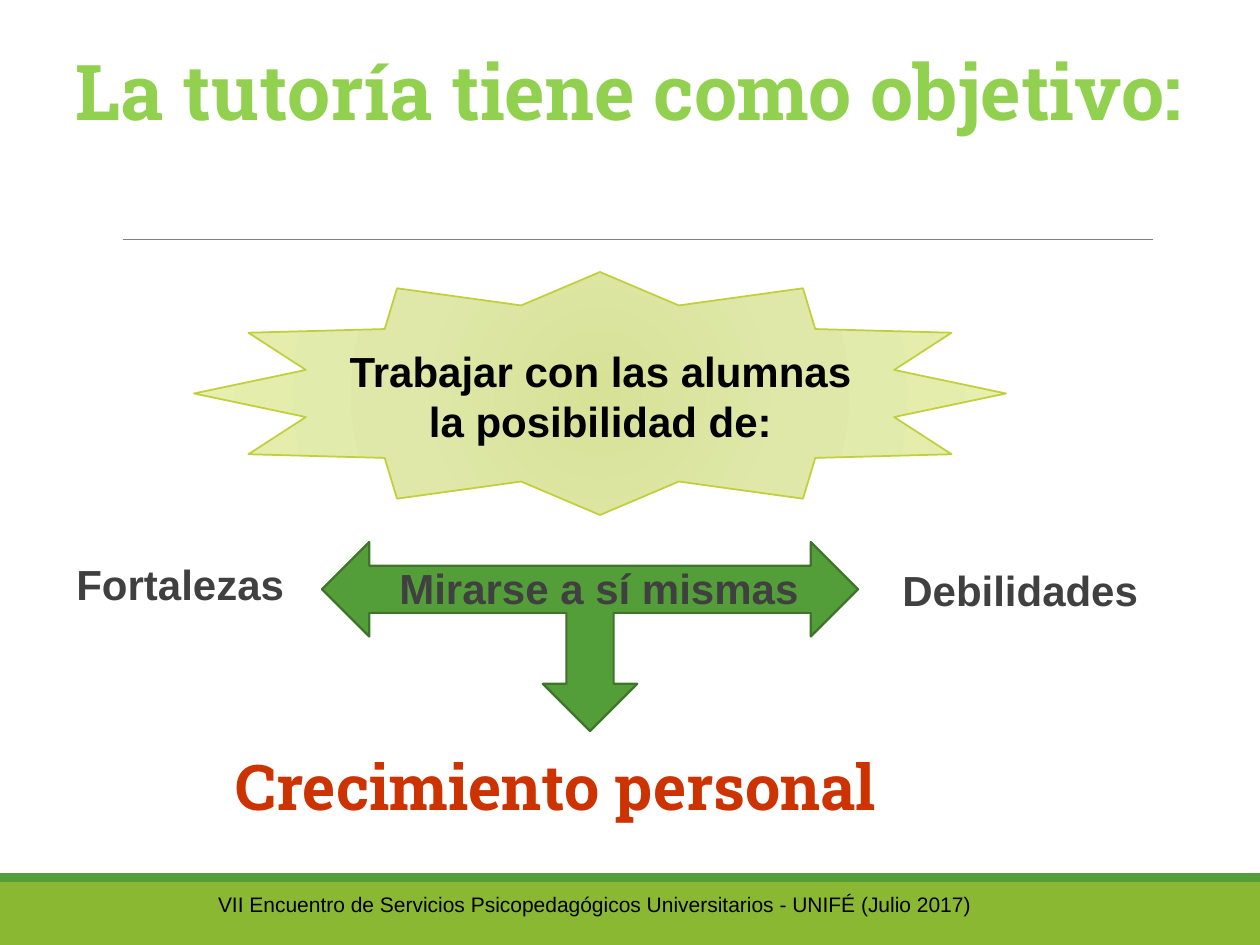
import pptx
import pptx.dml.color
import pptx.enum.shapes
import pptx.enum.text
import pptx.oxml
import pptx.oxml.ns
import pptx.util

EMU_PER_PX = 914400 / 126
SHAPES = pptx.enum.shapes.MSO_SHAPE
ALIGN = pptx.enum.text.PP_ALIGN
COLORS = {
    "footer": "8AB833", "green": "549E39", "edge": "3E752A", "rule": "808080",
    "title": "92D050", "goal": "CC3300", "body": "404040", "black": "000000",
    "star_edge": "C0CF3A", "star_in": "D7E297", "star_mid": "DFE8A9", "star_out": "E6F0AE",
}
HEADING, BODY = "Roboto Slab", "Arial"


def px(length):
    return pptx.util.Emu(round(length * EMU_PER_PX))


def rgb(name):
    return pptx.dml.color.RGBColor.from_string(COLORS[name])


class SlideBuilder:
    def __init__(self, slide):
        self.slide = slide

    def shape(self, kind, box, fill=None, edge=None, width=1):
        shape = self.slide.shapes.add_shape(kind, *map(px, box))
        shape.shadow.inherit = False
        if fill:
            shape.fill.solid()
            shape.fill.fore_color.rgb = rgb(fill)
        if edge:
            shape.line.color.rgb = rgb(edge)
            shape.line.width = pptx.util.Pt(width)
        else:
            shape.line.fill.background()
        return shape

    def radial_fill(self, shape, stops):
        ns = pptx.oxml.ns.nsdecls("a")
        stop_xml = "".join(
            f'<a:gs pos="{pos * 1000}"><a:srgbClr val="{COLORS[name]}"/></a:gs>'
            for pos, name in stops)
        gradient = pptx.oxml.parse_xml(
            f'<a:gradFill {ns} rotWithShape="1"><a:gsLst>{stop_xml}</a:gsLst>'
            '<a:path path="circle"><a:fillToRect l="100000" t="100000" '
            'r="100000" b="100000"/></a:path></a:gradFill>')
        geometry = shape.element.spPr.find(pptx.oxml.ns.qn("a:prstGeom"))
        geometry.addnext(gradient)

    def line(self, start, end, color, width):
        line = self.slide.shapes.add_connector(
            pptx.enum.shapes.MSO_CONNECTOR.STRAIGHT, *map(px, start + end))
        line.line.color.rgb = rgb(color)
        line.line.width = pptx.util.Pt(width)
        line.element.spPr.append(pptx.oxml.parse_xml(
            f'<a:effectLst {pptx.oxml.ns.nsdecls("a")}/>'))

    def text(self, box, words, size=24, color="body", font=BODY, bold=True,
             align=ALIGN.LEFT, wrap=True):
        frame = self.slide.shapes.add_textbox(*map(px, box)).text_frame
        frame.word_wrap = wrap
        paragraph = frame.paragraphs[0]
        paragraph.alignment = align
        run = paragraph.add_run()
        run.text = words
        run.font.size = pptx.util.Pt(size)
        run.font.name = font
        run.font.bold = bold
        run.font.color.rgb = rgb(color)


def main():
    deck = pptx.Presentation()
    deck.slide_width, deck.slide_height = px(1260), px(945)
    page = SlideBuilder(deck.slides.add_slide(deck.slide_layouts[6]))

    # Footer bands and title rule
    page.shape(SHAPES.RECTANGLE, (0, 882, 1260, 63), "footer")
    page.shape(SHAPES.RECTANGLE, (0, 873, 1260, 9), "green")
    page.line((123, 239), (1153, 239), "rule", 0.5)

    # Goal and the arrow that leads to it
    page.text((223, 741, 753, 89), "Crecimiento personal", 36, "goal", HEADING)
    arrow = page.shape(SHAPES.LEFT_RIGHT_UP_ARROW, (322, 542, 536, 189),
                       "green", "edge", 1.25)
    arrow.rotation = 180
    page.text((387, 556, 428, 64), "Mirarse a sí mismas", wrap=False)

    # Starburst, with the two sides of the arrow
    star = page.shape(SHAPES.STAR_12_POINT, (194, 272, 812, 243), edge="star_edge")
    page.radial_fill(star, [(0, "star_in"), (45, "star_mid"), (100, "star_out")])
    page.text((64, 552, 251, 64), "Fortalezas")
    page.text((890, 558, 263, 64), "Debilidades", wrap=False)
    page.text((329, 339, 543, 115), "Trabajar con las alumnas la posibilidad de:",
              color="black", align=ALIGN.CENTER)

    # Footer text and title
    page.text((0, 885, 1190, 63),
              "VII Encuentro de Servicios Psicopedagógicos Universitarios - UNIFÉ (Julio 2017)",
              12, "black", bold=False, align=ALIGN.CENTER)
    page.text((44, 37, 1171, 199), "La tutoría tiene como objetivo:",
              44, "title", HEADING, align=ALIGN.CENTER)

    deck.save("out.pptx")


if __name__ == "__main__":
    main()
